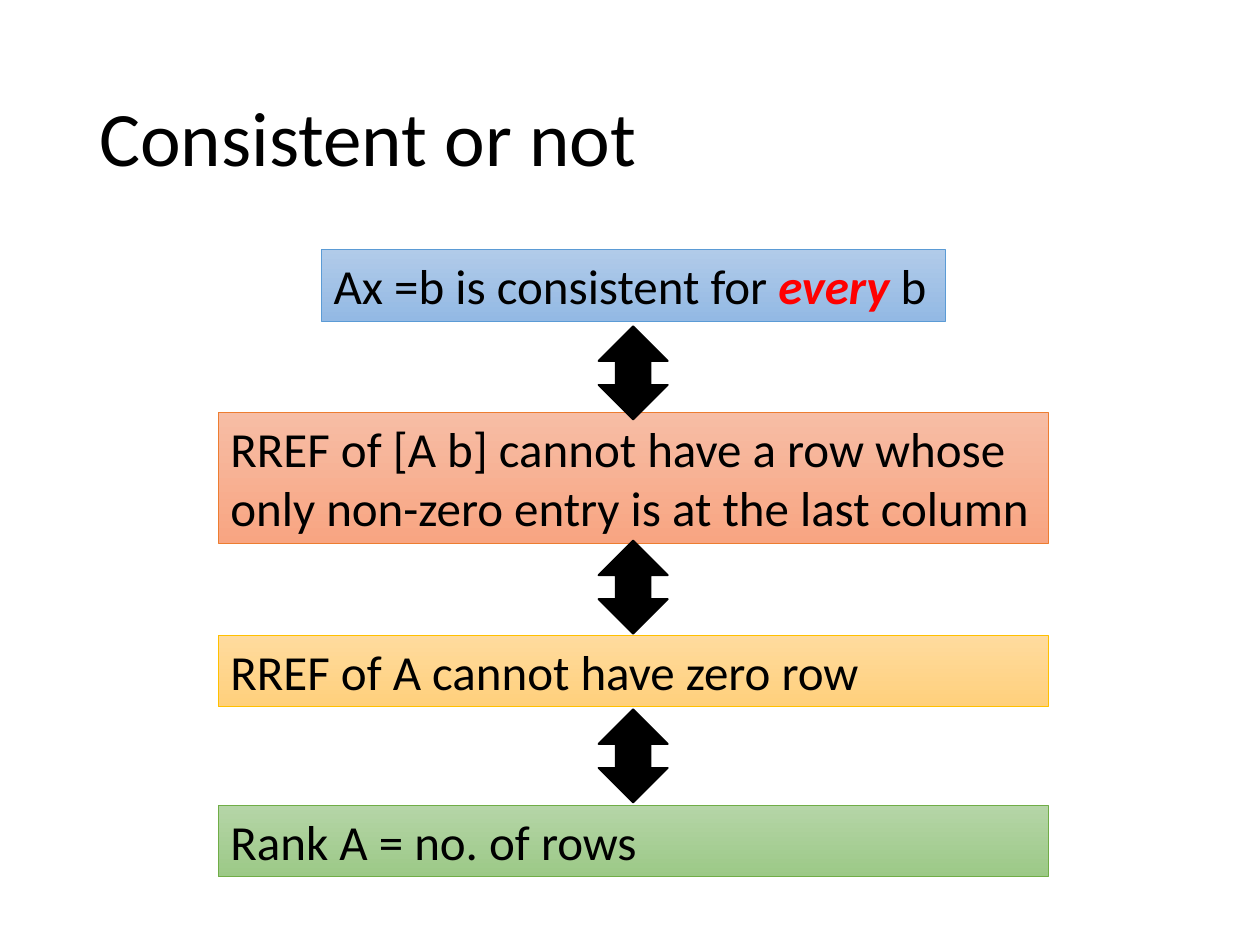
"""Build the slide on equivalent conditions for a consistent linear system."""
from pptx import Presentation
from pptx import util as u
from pptx.dml.color import RGBColor
from pptx.enum import shapes, text

COLORS = {
    "ink": "000000", "accent": "FF0000",
    "blue": ("B1CBE9", "93B9E4", "5B9BD5"),
    "orange": ("F7BDA5", "F8A582", "ED7D31"),
    "gold": ("FFDB9E", "FFD07C", "FFC000"),
    "green": ("B5D5A7", "9CC987", "70AD47"),
}
INK = RGBColor.from_string(COLORS["ink"])

deck = Presentation()
deck.slide_width, deck.slide_height = u.Inches(10), u.Inches(7.5)
page = deck.slides.add_slide(deck.slide_layouts[6])
column, row = deck.slide_width / 200, deck.slide_height / 150
axis = 100.5


def centered(top, width, height):
    return [int(n) for n in ((axis - width / 2) * column, top * row, width * column, height * row)]


def write(frame, parts, size):
    frame.word_wrap = True
    frame.vertical_anchor = text.MSO_ANCHOR.MIDDLE
    para = frame.paragraphs[0]
    para.alignment = text.PP_ALIGN.LEFT
    for part in parts:
        span = para.add_run()
        span.text = part
        span.font.name, span.font.size = "Calibri", u.Pt(size)
        span.font.color.rgb = INK
    return para


title = page.shapes.add_textbox(*(int(n) for n in (13.8 * column, 8 * row, 172.4 * column, 29 * row)))
write(title.text_frame, ["Consistent or not"], 44).line_spacing = 0.9

statements = [
    ("blue", 39.6, 99, 11.4, ["Ax =b is consistent for ", "every", " b"]),
    ("orange", 65.4, 131.8, 20.8,
     ["RREF of [A b] cannot have a row whose only non-zero entry is at the last column"]),
    ("gold", 100.8, 131.8, 11.4, ["RREF of A cannot have zero row"]),
    ("green", 127.8, 131.8, 11.4, ["Rank A = no. of rows"]),
]
for color, top, width, height, parts in statements:
    box = page.shapes.add_shape(shapes.MSO_SHAPE.RECTANGLE, *centered(top, width, height))
    box.shadow.inherit = False
    light, dark, edge = (RGBColor.from_string(shade) for shade in COLORS[color])
    box.fill.gradient()
    box.fill.gradient_angle = 270
    for stop, shade in zip(box.fill.gradient_stops, (light, dark)):
        stop.color.rgb = shade
    box.line.color.rgb = edge
    box.line.width = u.Pt(0.5)
    para = write(box.text_frame, parts, 28)
    box.text_frame.word_wrap = len(parts) == 1
    for span in para.runs[1:2]:
        span.font.bold = span.font.italic = True
        span.font.color.rgb = RGBColor.from_string(COLORS["accent"])

for top in (51.8, 85.8, 112.6):
    arrow = page.shapes.add_shape(shapes.MSO_SHAPE.UP_DOWN_ARROW, *centered(top, 11, 14.8))
    arrow.shadow.inherit = False
    arrow.fill.solid()
    arrow.fill.fore_color.rgb = INK
    arrow.line.color.rgb = INK
    arrow.line.width = u.Pt(1)

deck.save("out.pptx")
